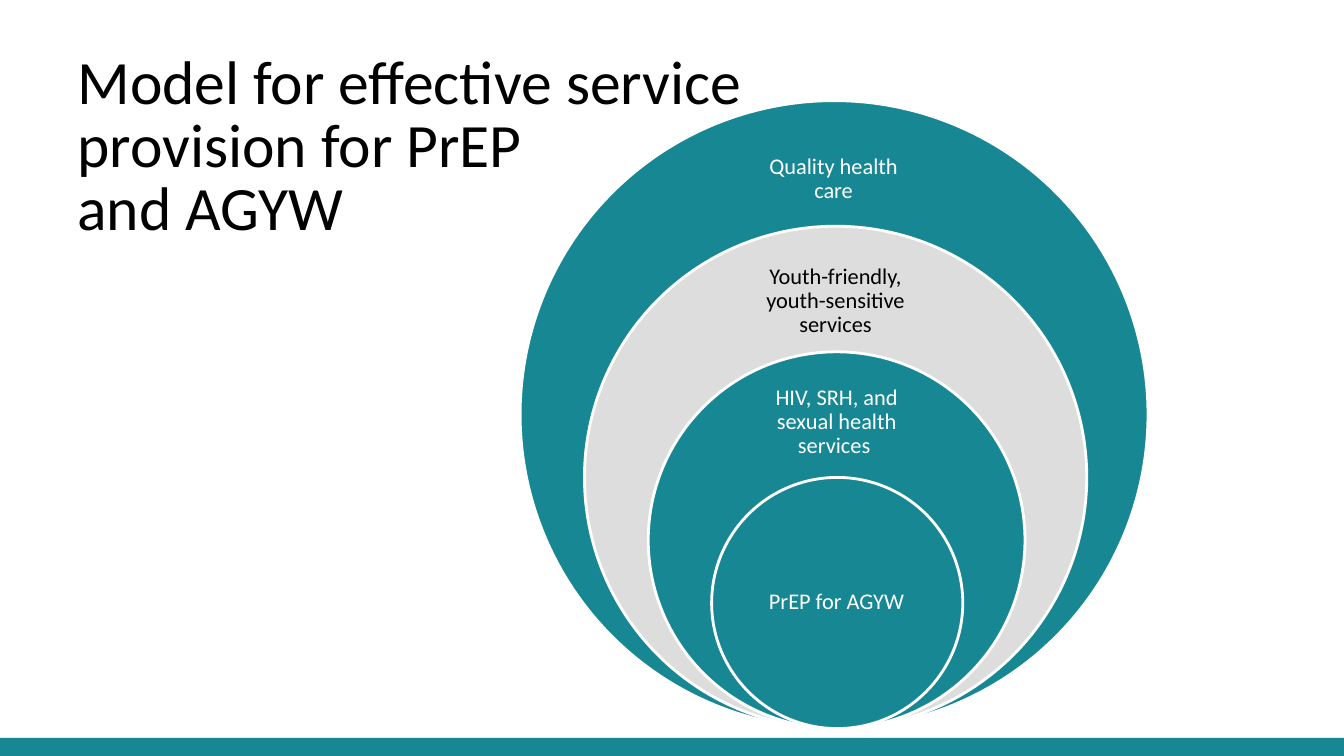
from pptx import Presentation
from pptx.dml.color import RGBColor
from pptx.enum.shapes import MSO_SHAPE
from pptx.enum.text import MSO_ANCHOR, PP_ALIGN
from pptx.util import Pt

TEAL = RGBColor(0x17, 0x87, 0x93)
GREY = RGBColor(0xDD, 0xDD, 0xDD)
WHITE = RGBColor(0xFF, 0xFF, 0xFF)
BLACK = RGBColor(0x00, 0x00, 0x00)

OVAL, RECTANGLE = MSO_SHAPE.OVAL, MSO_SHAPE.RECTANGLE
TOP, MIDDLE = MSO_ANCHOR.TOP, MSO_ANCHOR.MIDDLE
LEFT, CENTER = PP_ALIGN.LEFT, PP_ALIGN.CENTER

# Nested circles share a bottom edge and shrink by a fifth each time
OUTER_DIAMETER = 448.5
CIRCLES_BOTTOM = 520.4
SHRINK = 0.2

# Circle centre x, fill, label, label colour, label box (left, top, width, height)
LAYERS = [
    (595.8, TEAL, "Quality health care", WHITE, (532.8, 94.3, 125.3, 67)),
    (596.9, GREY, "Youth-friendly, youth-sensitive services", BLACK,
     (534.2, 182.9, 125.3, 64.8)),
    (597.6, TEAL, "HIV, SRH, and sexual health services ", WHITE,
     (535, 271.4, 125.3, 60.5)),
    (598, TEAL, "PrEP for AGYW", WHITE, (534.2, 385.2, 126.7, 90)),
]


def set_format(target, values):
    for attribute, value in values.items():
        setattr(target, attribute, value)


def add_filled_shape(slide, kind, box, fill, outline=None):
    shape = slide.shapes.add_shape(kind, *map(Pt, box))
    shape.shadow.inherit = False
    shape.fill.solid()
    shape.fill.fore_color.rgb = fill
    if outline is None:
        shape.line.fill.background()
    else:
        shape.line.color.rgb = outline
        shape.line.width = Pt(2)


def add_text(slide, box, text, size, color, align, anchor, line_spacing, insets):
    frame = slide.shapes.add_textbox(*map(Pt, box)).text_frame
    side, edge = map(Pt, insets)
    set_format(frame, {
        "word_wrap": True, "vertical_anchor": anchor,
        "margin_left": side, "margin_right": side,
        "margin_top": edge, "margin_bottom": edge,
    })
    paragraph = frame.paragraphs[0]
    paragraph.text = text
    set_format(paragraph, {"alignment": align, "line_spacing": line_spacing})
    for run in paragraph.runs:
        set_format(run.font, {"name": "Calibri", "size": Pt(size)})
        run.font.color.rgb = color


def add_layer(slide, index, layer):
    center_x, fill, label, label_color, label_box = layer
    diameter = OUTER_DIAMETER * (1 - SHRINK * index)
    circle_box = (center_x - diameter / 2, CIRCLES_BOTTOM - diameter,
                  diameter, diameter)
    add_filled_shape(slide, OVAL, circle_box, fill, WHITE)
    add_text(slide, label_box, label, 16, label_color, CENTER, MIDDLE,
             0.9, (8.6, 8.6))


def main():
    deck = Presentation()
    set_format(deck, {"slide_width": Pt(960), "slide_height": Pt(540)})
    slide = deck.slides.add_slide(deck.slide_layouts[6])

    # Footer band
    add_filled_shape(slide, RECTANGLE, (0, 527, 964.8, 15), TEAL)

    # Nested service circles, outermost first
    for index, layer in enumerate(LAYERS):
        add_layer(slide, index, layer)

    # Title
    add_text(slide, (48.2, 35.3, 864, 76.3),
             "Model for effective service \vprovision for PrEP \vand AGYW",
             44, BLACK, LEFT, TOP, Pt(44.8), (7.2, 3.6))

    deck.save("out.pptx")


if __name__ == "__main__":
    main()
